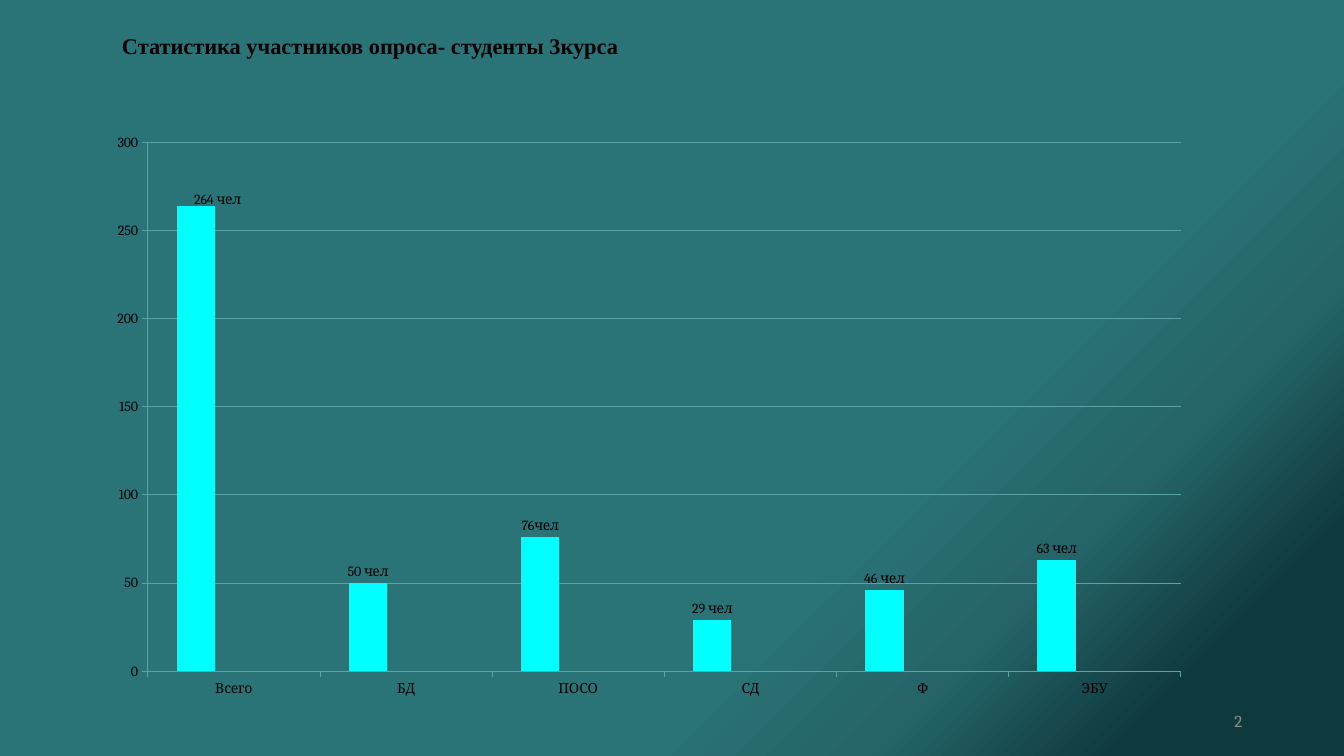
from dataclasses import dataclass
from typing import Any

from lxml import etree
from pptx import Presentation
from pptx.chart.data import CategoryChartData
from pptx.dml.color import RGBColor
from pptx.enum.chart import XL_CHART_TYPE as ChartType
from pptx.enum.chart import XL_LABEL_POSITION as LabelPosition
from pptx.enum.chart import XL_TICK_MARK as TickMark
from pptx.enum.text import MSO_ANCHOR as Anchor
from pptx.enum.text import MSO_AUTO_SIZE as AutoSize
from pptx.enum.text import PP_ALIGN as Align
from pptx.oxml import parse_xml
from pptx.oxml.ns import nsdecls, qn
from pptx.util import Inches, Pt

COLORS = {
    "text": "000000", "number": "8C8C8C", "grid": "5BA3A6",
    "people": "00FFFF", "grey": "AFAFAF", "teal": "5BBFC5",
}
BACKDROP = {11: "0F3A3D", 23: "256569", 35: "2A7478"}


@dataclass
class Group:
    name: str
    people: int
    label: str


@dataclass
class Caption:
    text: str
    box: tuple[float, float, float, float]
    color: str
    frame: dict[str, Any]
    align: Align
    font: dict[str, Any]


GROUPS = [
    Group("Всего", 264, "264 чел"),
    Group("БД", 50, "50 чел"),
    Group("ПОСО", 76, "76чел"),
    Group("СД", 29, "29 чел"),
    Group("Ф", 46, "46 чел"),
    Group("ЭБУ", 63, "63 чел"),
]
HEADING = Caption(
    "Статистика участников опроса- студенты 3курса", (1.11, 0.27, 5.19, 0.67), "text",
    {"word_wrap": False, "auto_size": AutoSize.NONE, "vertical_anchor": Anchor.TOP},
    Align.LEFT, {"name": "Times New Roman", "size": Pt(16), "bold": True},
)
PAGE_NUMBER = Caption(
    "2", (9.42, 6.95, 3, 0.4), "number",
    {"word_wrap": True, "vertical_anchor": Anchor.MIDDLE},
    Align.RIGHT, {"name": "Cambria", "size": Pt(12)},
)
CHART_FONT = {"name": "Cambria", "size": Pt(10), "bold": False}


def rgb(name: str) -> RGBColor:
    return RGBColor.from_string(COLORS[name])


def apply(target: Any, values: dict[str, Any]) -> None:
    for key, value in values.items():
        setattr(target, key, value)


def style_font(font: Any, values: dict[str, Any], color: str) -> None:
    apply(font, values)
    font.color.rgb = rgb(color)


def write_caption(shape: Any, caption: Caption) -> None:
    sides = ("left", "top", "width", "height")
    apply(shape, {side: Inches(n) for side, n in zip(sides, caption.box)})
    apply(shape.text_frame, caption.frame)
    line = shape.text_frame.paragraphs[0]
    line.alignment = caption.align
    run = line.add_run()
    run.text = caption.text
    style_font(run.font, caption.font, caption.color)


def paint_backdrop(slide: Any) -> None:
    fill = slide.background.fill
    fill.solid()
    stops = "".join(
        f'<a:gs pos="{pos * 1000}"><a:srgbClr val="{color}"/></a:gs>'
        for pos, color in BACKDROP.items()
    )
    gradient = parse_xml(
        f'<a:gradFill {nsdecls("a")} rotWithShape="1"><a:gsLst>{stops}</a:gsLst>'
        f'<a:lin ang="{225 * 60000}" scaled="0"/></a:gradFill>'
    )
    solid = next(slide.element.iter(qn("a:solidFill")))
    solid.getparent().replace(solid, gradient)


def manual_layout(values: dict[str, Any]) -> Any:
    layout = parse_xml(f'<c:layout {nsdecls("c")}><c:manualLayout/></c:layout>')
    for tag, value in values.items():
        etree.SubElement(layout[0], qn(f"c:{tag}")).set("val", str(value))
    return layout


def draw_chart(slide: Any) -> None:
    data = CategoryChartData()
    data.categories = [group.name for group in GROUPS]
    data.add_series("Series 1", [group.people for group in GROUPS])
    for name in ("Series 2", "Series 3"):
        data.add_series(name, [None] * len(GROUPS))
    chart = slide.shapes.add_chart(
        ChartType.COLUMN_CLUSTERED,
        Inches(1.11), Inches(1.27), Inches(10.82), Inches(5.68), data,
    ).chart
    apply(chart, {"has_legend": False, "has_title": False})
    style_font(chart.font, CHART_FONT, "text")

    # Columns
    plot = chart.plots[0]
    apply(plot, {"gap_width": 150, "overlap": 0, "vary_by_categories": False})
    for series, color in zip(plot.series, ("people", "grey", "teal")):
        series.format.fill.solid()
        series.format.fill.fore_color.rgb = rgb(color)

    # Head counts above the columns
    for point, group in enumerate(GROUPS):
        label = plot.series[0].points[point].data_label
        run = label.text_frame.paragraphs[0].add_run()
        run.text = group.label
        style_font(run.font, CHART_FONT, "text")
        label.position = LabelPosition.OUTSIDE_END

    # Axes and gridlines
    for axis in (chart.category_axis, chart.value_axis):
        axis.major_tick_mark = TickMark.OUTSIDE
        axis.minor_tick_mark = TickMark.NONE
        style_font(axis.tick_labels.font, CHART_FONT, "text")
        axis.format.line.color.rgb = rgb("grid")
        axis.format.line.width = Pt(0.75)
    apply(chart.value_axis, {
        "minimum_scale": 0, "maximum_scale": 300, "major_unit": 50,
        "has_major_gridlines": True,
    })
    gridline = chart.value_axis.major_gridlines.format.line
    gridline.color.rgb = rgb("grid")
    gridline.width = Pt(0.75)

    # Plot area, and the first label nudged to the right
    area = next(chart.element.iter(qn("c:plotArea")))
    for old in area.findall(qn("c:layout")):
        area.remove(old)
    area.insert(0, manual_layout({
        "layoutTarget": "inner", "xMode": "edge", "yMode": "edge",
        "x": 0.033, "y": 0.025, "w": 0.947, "h": 0.924,
    }))
    first_label = next(chart.element.iter(qn("c:dLbl")))
    first_label.insert(1, manual_layout({"x": 0.02, "y": 0.01}))


def main() -> None:
    deck = Presentation()
    deck.slide_width, deck.slide_height = Inches(13.33), Inches(7.5)
    slide = deck.slides.add_slide(deck.slide_layouts[5])
    paint_backdrop(slide)
    write_caption(slide.shapes.add_textbox(0, 0, 0, 0), PAGE_NUMBER)
    draw_chart(slide)
    write_caption(slide.shapes.title, HEADING)
    deck.save("out.pptx")


if __name__ == "__main__":
    main()
